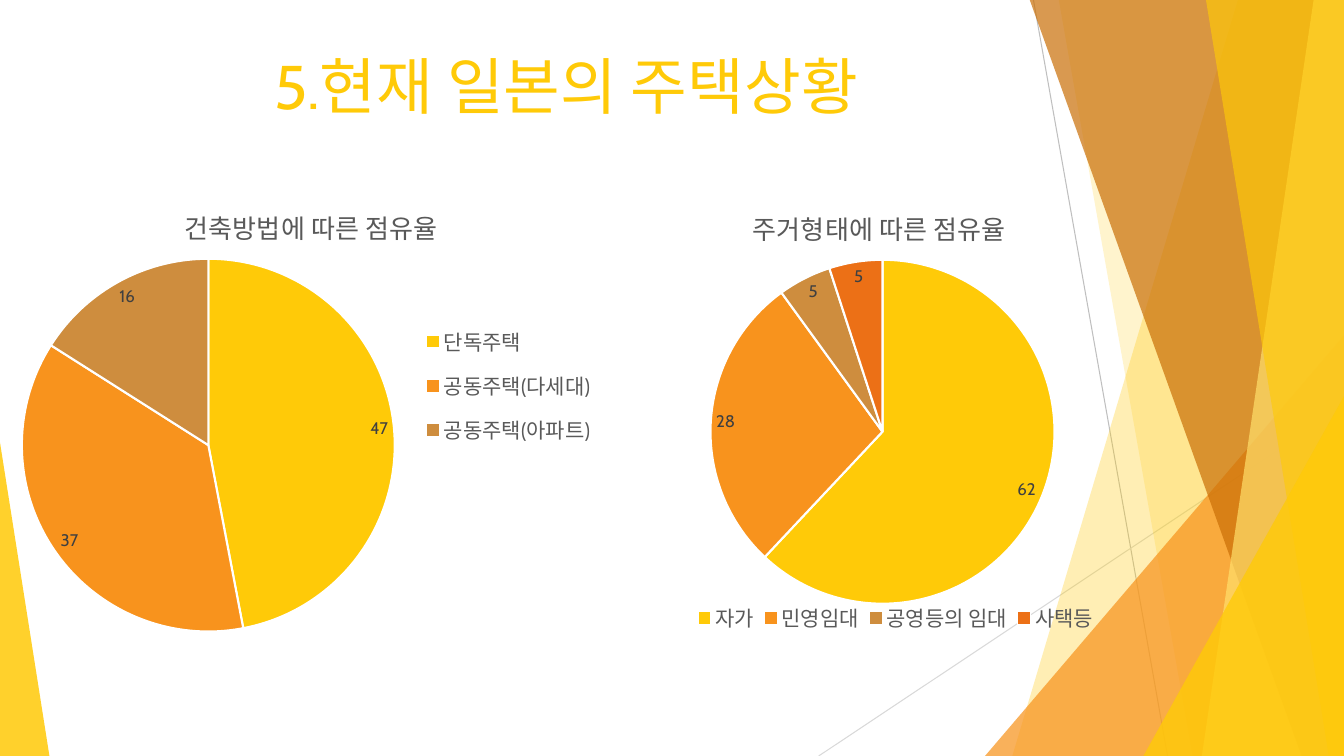
import pptx
import pptx.chart.data
import pptx.dml.color
import pptx.enum.chart
import pptx.enum.shapes
import pptx.enum.text
import pptx.oxml
import pptx.oxml.ns
import pptx.util

Inches = pptx.util.Inches
Pt = pptx.util.Pt
RGB = pptx.dml.color.RGBColor
SHAPE = pptx.enum.shapes.MSO_SHAPE
LEGEND = pptx.enum.chart.XL_LEGEND_POSITION
qn = pptx.oxml.ns.qn

FONT = "Cabin"
GOLD = RGB(0xFF, 0xCA, 0x08)
ORANGE = RGB(0xF8, 0x93, 0x1D)
BROWN = RGB(0xCE, 0x8D, 0x3E)
RED = RGB(0xEC, 0x70, 0x16)
RUST = RGB(0xCA, 0x6F, 0x06)
PALE = RGB(0xFF, 0xDF, 0x6B)
WHITE = RGB(0xFF, 0xFF, 0xFF)
DARK = RGB(0x40, 0x40, 0x40)
GRAY = RGB(0x59, 0x59, 0x59)
SILVER = RGB(0xBF, 0xBF, 0xBF)
LIGHT = RGB(0xD9, 0xD9, 0xD9)
SLICES = [GOLD, ORANGE, BROWN, RED]


def write(frame, text, size, color, bold=False):
    run = frame.paragraphs[0].add_run()
    run.text = text
    run.font.name = FONT
    run.font.size = Pt(size)
    run.font.bold = bold
    run.font.color.rgb = color


def place(part, index, inner=False, **spots):
    """Give a chart part a manual layout, in fractions of the chart."""
    old = part.find(qn("c:layout"))
    if old is not None:
        part.remove(old)
    tags = '<c:layoutTarget val="inner"/>' if inner else ""
    tags += '<c:xMode val="edge"/><c:yMode val="edge"/>'
    tags += "".join(f'<c:{key} val="{val}"/>' for key, val in spots.items())
    part.insert(index, pptx.oxml.parse_xml(
        f'<c:layout {pptx.oxml.ns.nsdecls("c")}>'
        f"<c:manualLayout>{tags}</c:manualLayout></c:layout>"))


deck = pptx.Presentation()
deck.slide_width = Inches(13.33)
deck.slide_height = Inches(7.5)
slide = deck.slides.add_slide(deck.slide_layouts[6])
shapes = slide.shapes

# Thin lines behind the facets
for x1, y1, x2, y2, color in [(10.25, 0, 11.58, 7.5, SILVER),
                              (13.33, 4.03, 8.12, 7.5, LIGHT)]:
    line = shapes.add_connector(pptx.enum.shapes.MSO_CONNECTOR.STRAIGHT,
                                Inches(x1), Inches(y1), Inches(x2), Inches(y2))
    line.line.color.rgb = color
    line.line.width = Pt(0.75)
    line._element.spPr.append(pptx.oxml.parse_xml(
        f'<a:effectLst {pptx.oxml.ns.nsdecls("a")}/>'))

# Facets: bands run from a top x to a bottom x and fill to the right edge;
# triangles have left, top, width, height and tip
facets = [
    ("band", (12.28, 10.04), GOLD, 30),
    ("band", (10.5, 11.83), GOLD, 20),
    ("triangle", (9.77, 3.33, 3.56, 4.17, 1), ORANGE, 72),
    ("band", (10.21, 12.91), RUST, 70),
    ("band", (13.03, 11.92), PALE, 70),
    ("band", (11.96, 13.18), GOLD, 65),
    ("triangle", (11.34, 3.93, 1.99, 3.57, 1), GOLD, 80),
    ("triangle", (0, 4.39, 0.49, 3.11, 0), GOLD, 85),
]
for kind, spot, color, alpha in facets:
    if kind == "band":
        top, foot = spot
        pen = shapes.build_freeform(Inches(top), Inches(-0.01))
        pen.add_line_segments([(Inches(x), Inches(y)) for x, y in
                               [(13.33, -0.01), (13.33, 7.5), (foot, 7.5)]])
        facet = pen.convert_to_shape()
    else:
        *box, tip = spot
        facet = shapes.add_shape(SHAPE.ISOSCELES_TRIANGLE, *map(Inches, box))
        facet.adjustments[0] = tip
    facet.shadow.inherit = False
    facet.line.fill.background()
    facet.fill.solid()
    facet.fill.fore_color.rgb = color
    tint = facet._element.spPr.find(qn("a:solidFill"))[0]
    tint.append(pptx.oxml.parse_xml(
        f'<a:alpha {pptx.oxml.ns.nsdecls("a")} val="{alpha * 1000}"/>'))

# Title
title = shapes.add_textbox(Inches(2.62), Inches(0.41), Inches(7.06), Inches(0.85))
title.text_frame.word_wrap = True
title.text_frame.vertical_anchor = pptx.enum.text.MSO_ANCHOR.BOTTOM
write(title.text_frame, "5.현재 일본의 주택상황", size=44, color=GOLD)

# Pie charts: box, title, side of legend, values, then the three layouts
pies = [
    ((0, 1.75, 6.15, 4.67), "건축방법에 따른 점유율", LEGEND.RIGHT,
     {"단독주택": 47, "공동주택(다세대)": 37, "공동주택(아파트)": 16},
     dict(x=0.29, y=0.05), dict(x=0.66, y=0.29, w=0.32, h=0.31),
     dict(x=0.035, y=0.175, w=0.602, h=0.792)),
    ((5.42, 1.75, 6.66, 4.84), "주거형태에 따른 점유율", LEGEND.BOTTOM,
     {"자가": 62, "민영임대": 28, "공영등의 임대": 5, "사택등": 5},
     dict(x=0.3, y=0.05), dict(x=0.21, y=0.87, w=0.62, h=0.07),
     dict(x=0.244, y=0.171, w=0.513, h=0.705)),
]
for box, name, side, shares, head, key, disc in pies:
    data = pptx.chart.data.CategoryChartData()
    data.categories = list(shares)
    data.add_series(name, list(shares.values()))
    chart = shapes.add_chart(pptx.enum.chart.XL_CHART_TYPE.PIE,
                             *map(Inches, box), data).chart
    chart.font.name = FONT
    chart.font.size = Pt(10)

    chart.has_title = True
    write(chart.chart_title.text_frame, name, size=18.6, color=GRAY)

    chart.has_legend = True
    chart.legend.position = side
    chart.legend.include_in_layout = False
    chart.legend.font.name = FONT
    chart.legend.font.size = Pt(15)
    chart.legend.font.color.rgb = GRAY

    plot = chart.plots[0]
    plot.vary_by_categories = True
    for i, color in enumerate(SLICES[:len(shares)]):
        form = plot.series[0].points[i].format
        form.fill.solid()
        form.fill.fore_color.rgb = color
        form.line.color.rgb = WHITE
        form.line.width = Pt(1.5)

    labels = plot.series[0].data_labels
    labels.show_value = True
    labels.position = pptx.enum.chart.XL_LABEL_POSITION.BEST_FIT
    labels.font.name = FONT
    labels.font.size = Pt(12)
    labels.font.color.rgb = DARK

    root = chart._chartSpace.find(qn("c:chart"))
    place(root.find(qn("c:title")), 1, **head)
    place(root.find(qn("c:legend")), 1, **key)
    place(root.find(qn("c:plotArea")), 0, inner=True, **disc)

deck.save("out.pptx")
